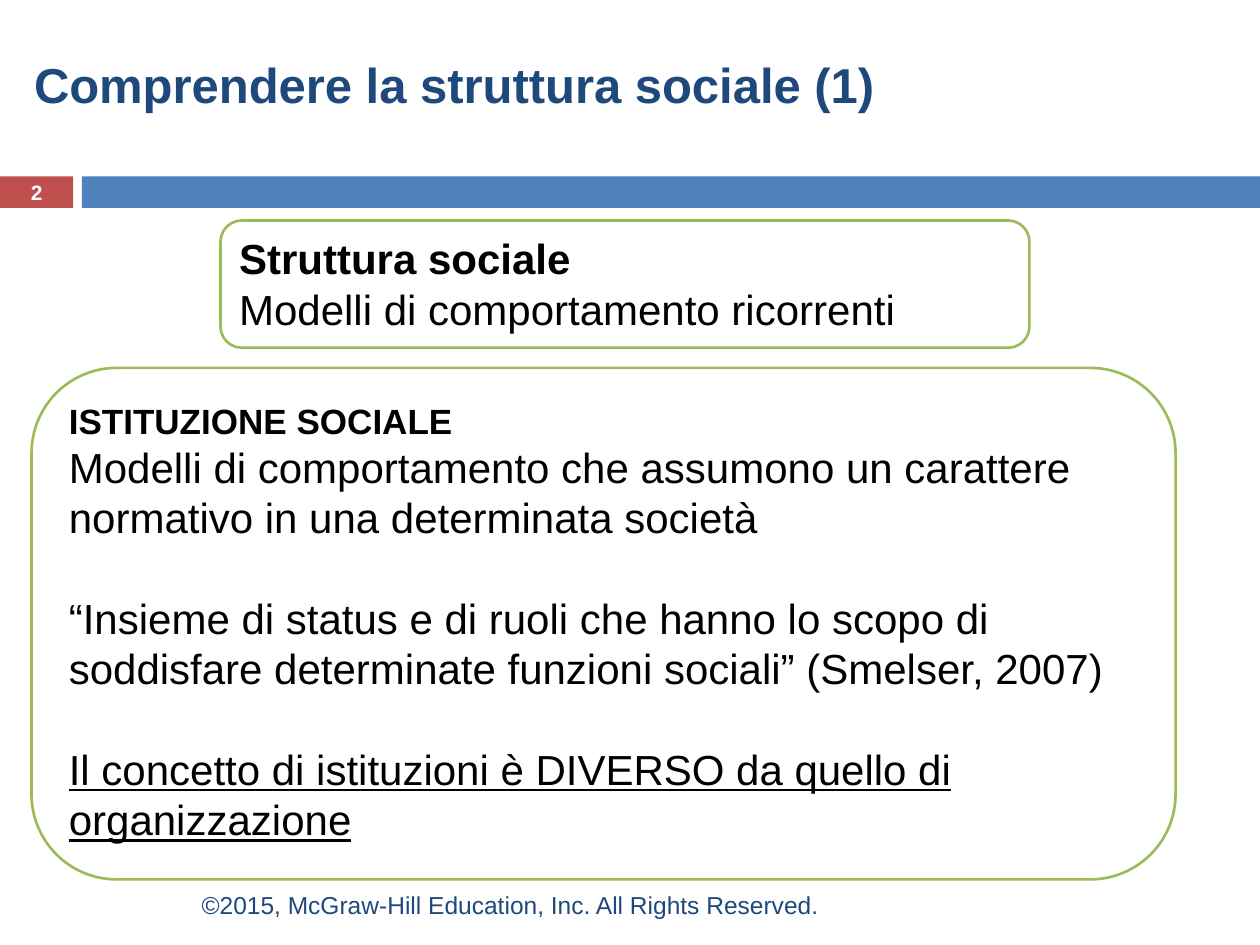
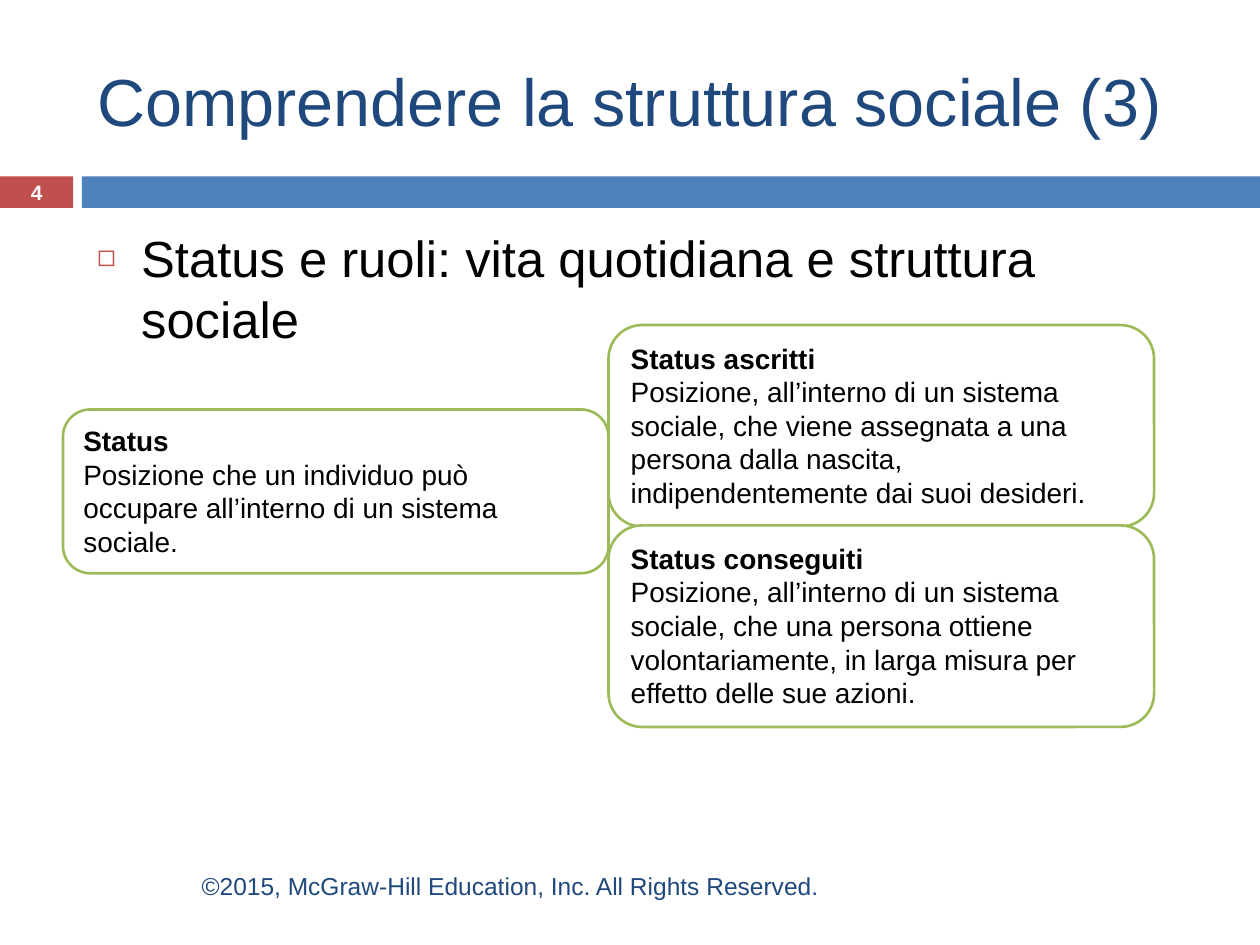
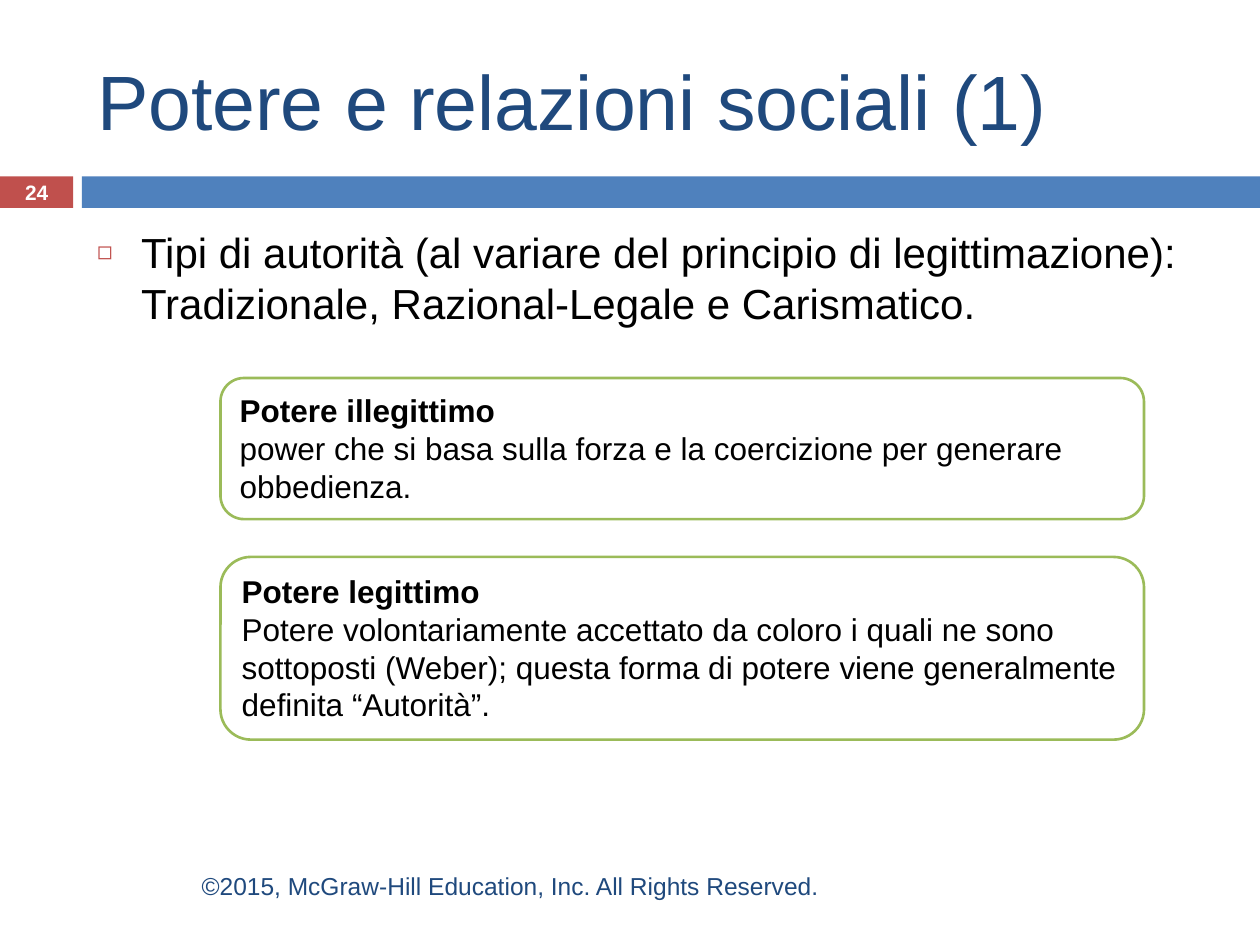
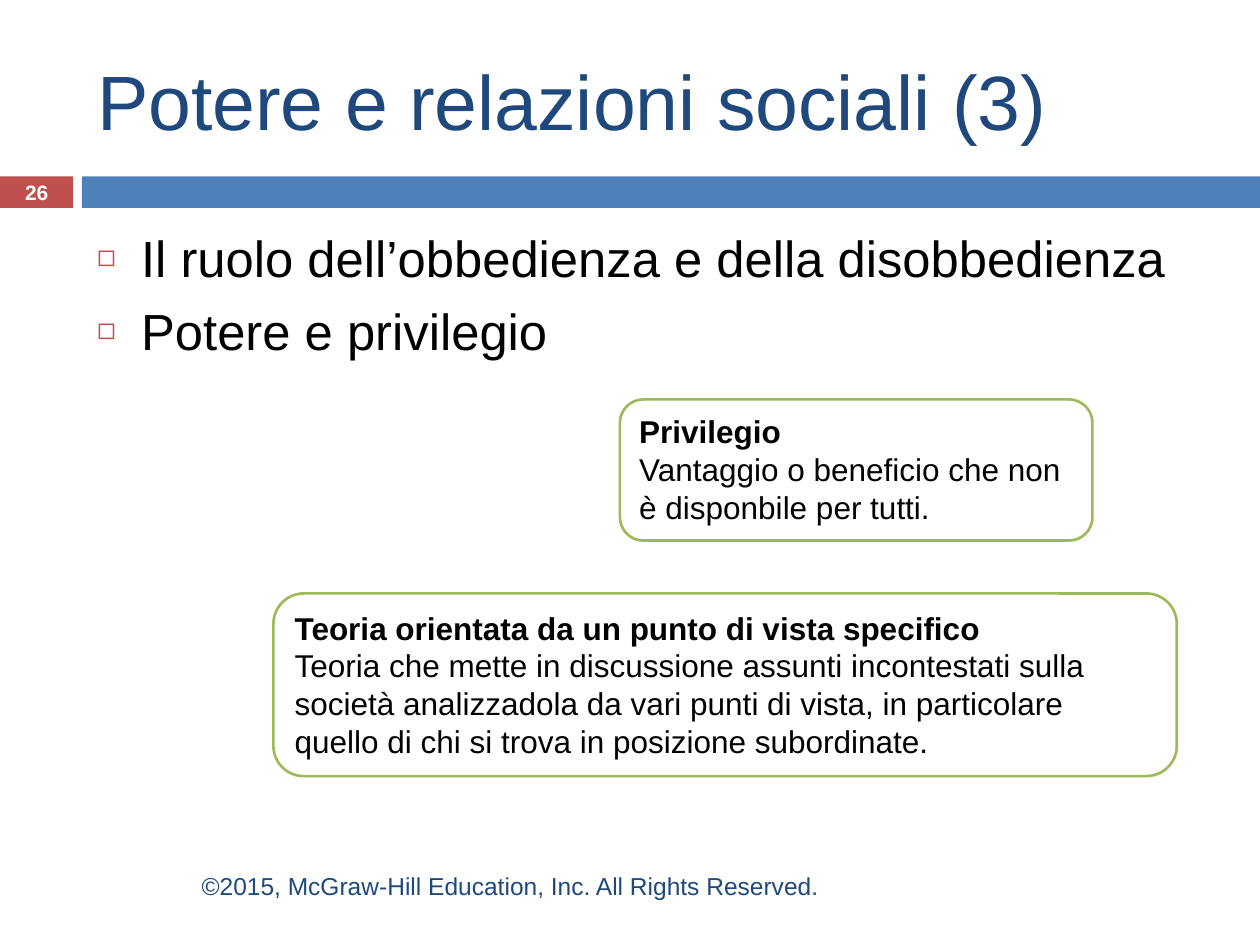
from dataclasses import dataclass

from lxml import etree
from pptx import Presentation
from pptx.dml.color import RGBColor
from pptx.enum.shapes import MSO_SHAPE as Preset
from pptx.enum.text import MSO_ANCHOR as Anchor, MSO_AUTO_SIZE as AutoSize, PP_ALIGN as Align
from pptx.oxml.ns import qn
from pptx.util import Emu, Pt

# Shared look: lengths are px, 100 to the inch
SCALE = 9144
FONT = "Arial"
NAVY, BLUE, RED, GREEN = "1F497D", "4F81BD", "C0504D", "9BBB59"
WHITE, BLACK = "FFFFFF", "000000"
FOOTER = "©2015, McGraw-Hill Education, Inc. All Rights Reserved."
TITLE_ONLY, TITLE_AND_BODY = 5, 1
Area = tuple[int, int, int, int]
BODY_AREA: Area = (67, 175, 892, 492)
NUMBER_BAND: Area = (0, 140, 58, 25)
WIDE_BAND: Area = (65, 140, 935, 25)


@dataclass
class Line:
    text: str
    size: float
    bold: bool = False
    underline: bool = False
    before: float = 0
    color: str = BLACK


@dataclass
class Card:
    area: Area
    lines: list[Line]


@dataclass
class Page:
    number: int
    title: Line
    cards: list[Card]
    bullets: list[Line]
    title_area: Area = (67, 25, 892, 108)
    footer_top: int = 683


def px(length: int) -> Emu:
    return Emu(length * SCALE)


def color(value: str) -> RGBColor:
    return RGBColor.from_string(value)


def place(shape, area: Area) -> None:
    for name, length in zip(("left", "top", "width", "height"), area):
        setattr(shape, name, px(length))


def write(shape, lines: list[Line], align=Align.LEFT, anchor=Anchor.TOP,
          fit=AutoSize.NONE, bulleted: bool = False) -> None:
    frame = shape.text_frame
    frame_format = {"word_wrap": True, "auto_size": fit, "vertical_anchor": anchor}
    for name, value in frame_format.items():
        setattr(frame, name, value)
    for index, line in enumerate(lines):
        para = frame.add_paragraph() if index else frame.paragraphs[0]
        if bulleted:
            add_bullet(para)
        para.alignment = align
        para.space_before = Pt(line.before if index else 0)
        span = para.add_run()
        span.text = line.text
        span_format = {"name": FONT, "size": Pt(line.size), "bold": line.bold,
                       "underline": line.underline}
        for name, value in span_format.items():
            setattr(span.font, name, value)
        span.font.color.rgb = color(line.color)


def add_bullet(para) -> None:
    properties = para._p.get_or_add_pPr()
    properties.set("marL", str(px(35)))
    properties.set("indent", str(-px(35)))
    bullet_color = etree.SubElement(properties, qn("a:buClr"))
    etree.SubElement(bullet_color, qn("a:srgbClr"), val=RED)
    etree.SubElement(properties, qn("a:buSzPct"), val="60000")
    etree.SubElement(properties, qn("a:buChar"), char="◻")


def add_block(page, preset, area: Area, fill: str, outline: str = ""):
    block = page.shapes.add_shape(preset, *map(px, area))
    block.shadow.inherit = False
    block.fill.solid()
    block.fill.fore_color.rgb = color(fill)
    if outline:
        block.line.color.rgb = color(outline)
        block.line.width = Pt(1.5)
    else:
        block.line.fill.background()
    return block


def add_label(page, area: Area, line: Line, align) -> None:
    box = page.shapes.add_textbox(*map(px, area))
    write(box, [line], align, Anchor.MIDDLE)


def build_page(deck, content: Page) -> None:
    layout = TITLE_AND_BODY if content.bullets else TITLE_ONLY
    page = deck.slides.add_slide(deck.slide_layouts[layout])

    # Bands, title and bullet list
    add_block(page, Preset.RECTANGLE, NUMBER_BAND, RED)
    add_block(page, Preset.RECTANGLE, WIDE_BAND, BLUE)
    place(page.shapes.title, content.title_area)
    write(page.shapes.title, [content.title], anchor=Anchor.MIDDLE)
    if content.bullets:
        body = page.placeholders[1]
        place(body, BODY_AREA)
        write(body, content.bullets, bulleted=True)

    # Page number, definition cards and footer
    add_label(page, (0, 139, 58, 27), Line(str(content.number), 11.9, bold=True, color=WHITE),
              Align.CENTER)
    for card in content.cards:
        box = add_block(page, Preset.ROUNDED_RECTANGLE, card.area, WHITE, GREEN)
        write(box, card.lines, fit=AutoSize.SHAPE_TO_FIT_TEXT)
    add_label(page, (67, content.footer_top, 593, 40), Line(FOOTER, 14, color=NAVY), Align.RIGHT)


def heading(text: str, size: float, bold: bool = False) -> Line:
    return Line(text, size, bold, color=NAVY)


def bullet(text: str, size: float = 29) -> Line:
    return Line(text, size, before=7)


def definition(area: Area, term: str, meaning: str, size: float) -> Card:
    return Card(area, [Line(term, size, bold=True), Line(meaning, size)])


# Page contents
PAGES = [
    Page(2, heading("Comprendere la struttura sociale (1)", 28, bold=True), [
        definition((175, 175, 642, 101), "Struttura sociale",
                   "Modelli di comportamento ricorrenti", 24),
        Card((25, 292, 908, 406), [
            Line("ISTITUZIONE SOCIALE", 20, bold=True),
            Line("Modelli di comportamento che assumono un carattere normativo "
                 "in una determinata società", 24),
            Line("“Insieme di status e di ruoli che hanno lo scopo di soddisfare "
                 "determinate funzioni sociali” (Smelser, 2007)", 24, before=28.8),
            Line("Il concetto di istituzioni è DIVERSO da quello di organizzazione", 24,
                 underline=True, before=28.8),
        ]),
    ], [], title_area=(17, 25, 817, 83), footer_top=698),
    Page(4, heading("Comprendere la struttura sociale (3)", 38), [
        definition((50, 325, 433, 130), "Status",
                   "Posizione che un individuo può occupare all’interno di un sistema sociale.", 16),
        definition((483, 258, 433, 160), "Status ascritti",
                   "Posizione, all’interno di un sistema sociale, che viene assegnata a una "
                   "persona dalla nascita, indipendentemente dai suoi desideri.", 16),
        definition((483, 417, 433, 160), "Status conseguiti",
                   "Posizione, all’interno di un sistema sociale, che una persona ottiene "
                   "volontariamente, in larga misura per effetto delle sue azioni.", 16),
    ], [bullet("Status e ruoli: vita quotidiana e struttura sociale")]),
    Page(24, heading("Potere e relazioni sociali (1)", 44), [
        definition((175, 442, 733, 145), "Potere legittimo",
                   "Potere volontariamente accettato da coloro i quali ne sono sottoposti (Weber); "
                   "questa forma di potere viene generalmente definita “Autorità”.", 18),
        definition((175, 300, 733, 112), "Potere illegittimo",
                   "power che si basa sulla forza e la coercizione per generare obbedienza.", 18),
    ], [bullet("Tipi di autorità (al variare del principio di legittimazione): "
               "Tradizionale, Razional-Legale e Carismatico.", 24)]),
    Page(26, heading("Potere e relazioni sociali (3)", 44), [
        definition((492, 317, 375, 112), "Privilegio",
                   "Vantaggio o beneficio che non è disponbile per tutti.", 18),
        definition((217, 471, 717, 145), "Teoria orientata da un punto di vista specifico",
                   "Teoria che mette in discussione assunti incontestati sulla società "
                   "analizzadola da vari punti di vista, in particolare quello di chi si trova "
                   "in posizione subordinate.", 18),
    ], [bullet("Il ruolo dell’obbedienza e della disobbedienza"), bullet("Potere e privilegio")]),
]


def main() -> None:
    deck = Presentation()
    deck.slide_width, deck.slide_height = px(1000), px(750)
    for content in PAGES:
        build_page(deck, content)
    deck.save("out.pptx")


if __name__ == "__main__":
    main()
